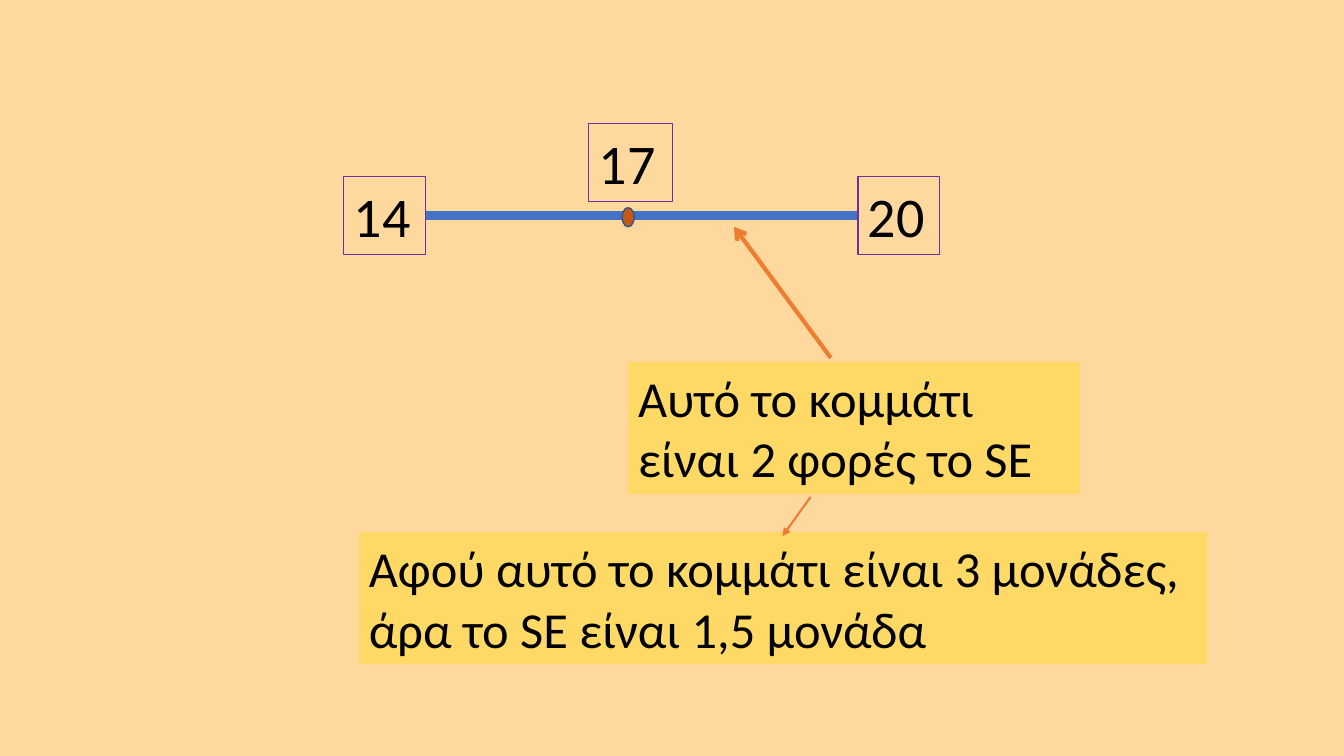
import pptx
import pptx.util
import pptx.dml.color
import pptx.enum.shapes
import pptx.enum.text
import pptx.oxml.ns
from lxml import etree

Inches = pptx.util.Inches

# Content: text, (left, top, width, height)
NUMBERS = [
    ("14", (3.41, 1.75, 0.81, 0.78)),
    ("17", (5.84, 1.23, 0.83, 0.77)),
    ("20", (8.51, 1.75, 0.81, 0.78)),
]
NOTES = [
    ("Αυτό το κομμάτι είναι 2 φορές το SE", (6.23, 3.59, 4.48, 1.31)),
    ("Αφού αυτό το κομμάτι είναι 3 μονάδες, άρα το SE είναι 1,5 μονάδα",
     (3.56, 5.28, 8.41, 1.31)),
]
INTERVAL = ((4.22, 2.14), (8.51, 2.14))
MEAN_DOT = (6.17, 2.06, 0.12, 0.19)
# Arrows: start, end, line width, head type
ARROWS = [
    ((8.24, 3.55), (7.28, 2.25), 3, "arrow"),
    ((8.04, 4.93), (7.76, 5.32), 1.5, "triangle"),
]

THEME = {
    "font": "Calibri",
    "number_size": 40,
    "note_size": 36,
    "background": "FFD89D",
    "text": "000000",
    "frame": "7030A0",
    "note": "FFD966",
    "interval": "4472C4",
    "dot": "C55A11",
    "dot_line": "325491",
    "arrow": "ED7D31",
}


def color(name):
    return pptx.dml.color.RGBColor.from_string(THEME[name])


def set_line(line, name, width):
    line.color.rgb = color(name)
    line.width = pptx.util.Pt(width)


def add_text(slide, text, place, size):
    box = slide.shapes.add_textbox(*map(Inches, place))
    frame = box.text_frame
    frame.word_wrap = True
    frame.auto_size = pptx.enum.text.MSO_AUTO_SIZE.SHAPE_TO_FIT_TEXT
    frame.text = text
    font = frame.paragraphs[0].runs[0].font
    font.name = THEME["font"]
    font.size = pptx.util.Pt(THEME[size])
    font.color.rgb = color("text")
    return box


def add_line(slide, start, end, name, width, head=None):
    connector = slide.shapes.add_connector(
        pptx.enum.shapes.MSO_CONNECTOR.STRAIGHT, *map(Inches, start + end))
    set_line(connector.line, name, width)
    qn = pptx.oxml.ns.qn
    if head:
        etree.SubElement(connector.line._get_or_add_ln(), qn("a:tailEnd"), type=head)
    etree.SubElement(connector._element.spPr, qn("a:effectLst"))
    return connector


def main():
    presentation = pptx.Presentation()
    presentation.slide_width = Inches(13.33)
    presentation.slide_height = Inches(7.5)
    slide = presentation.slides.add_slide(presentation.slide_layouts[6])
    slide.background.fill.solid()
    slide.background.fill.fore_color.rgb = color("background")

    # Interval line between the framed limits, with the mean above it
    interval = add_line(slide, *INTERVAL, "interval", 6)
    boxes = {}
    for text, place in NUMBERS:
        boxes[text] = add_text(slide, text, place, "number_size")
        set_line(boxes[text].line, "frame", 0.75)
    interval.begin_connect(boxes["14"], 3)
    interval.end_connect(boxes["20"], 1)

    # Mean marker
    dot = slide.shapes.add_shape(
        pptx.enum.shapes.MSO_SHAPE.OVAL, *map(Inches, MEAN_DOT))
    dot.shadow.inherit = False
    dot.fill.solid()
    dot.fill.fore_color.rgb = color("dot")
    set_line(dot.line, "dot_line", 1)

    # Explanations, each with its arrow
    for (text, place), (start, end, width, head) in zip(NOTES, ARROWS):
        note = add_text(slide, text, place, "note_size")
        note.fill.solid()
        note.fill.fore_color.rgb = color("note")
        add_line(slide, start, end, "arrow", width, head)

    presentation.save("out.pptx")


if __name__ == "__main__":
    main()
